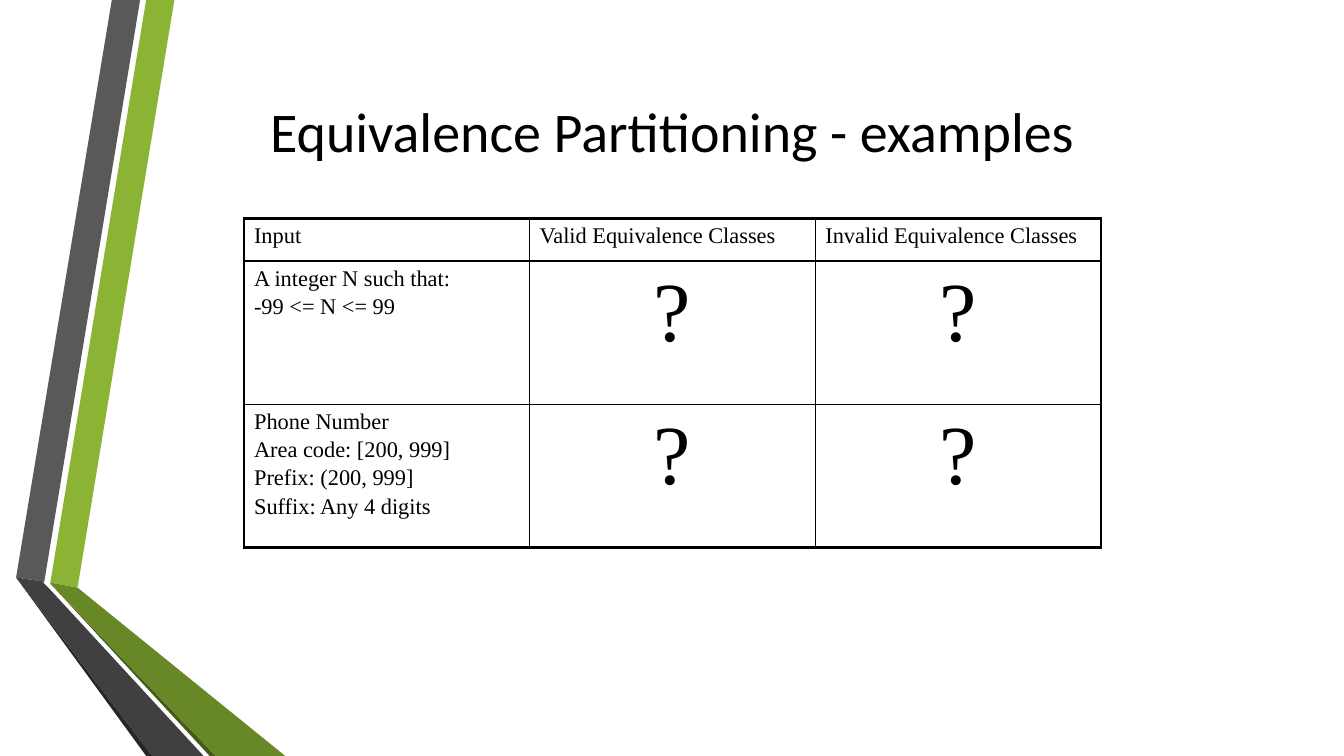
from lxml.etree import SubElement
from pptx import Presentation
from pptx.dml.color import RGBColor
from pptx.enum.text import MSO_ANCHOR, PP_ALIGN
from pptx.oxml import parse_xml
from pptx.oxml.ns import nsdecls, qn
from pptx.util import Inches, Pt

THEME = {
    "ink": "000000", "paper": "FFFFFF",
    "lime": "8BB434", "olive": "688727", "moss": "465A1A",
    "gray": "595959", "dark": "404040", "night": "262626",
    "title": {"name": "Calibri", "size": Pt(40), "bold": False},
    "text": {"name": "Times New Roman", "size": Pt(16), "bold": False},
    "mark": {"name": "Times New Roman", "size": Pt(60), "bold": False},
    "gap": Pt(2.5), "thick": Pt(2.25), "thin": Pt(1),
}


def style(para, look, align):
    para.alignment = align
    for key, value in THEME[look].items():
        setattr(para.font, key, value)
    para.font.color.rgb = RGBColor.from_string(THEME["ink"])


def border(cell, sides):
    props = cell._tc.get_or_add_tcPr()
    for spot, (side, width) in enumerate(sides.items()):
        line = parse_xml(f'<a:ln{side} {nsdecls("a")} w="{width}"/>')
        fill = SubElement(line, qn("a:solidFill"))
        SubElement(fill, qn("a:srgbClr"), val=THEME["ink"])
        props.insert(spot, line)


deck = Presentation()
deck.slide_width, deck.slide_height = Inches(13.33), Inches(7.5)
slide = deck.slides.add_slide(deck.slide_layouts[5])
slide.background.fill.solid()
slide.background.fill.fore_color.rgb = RGBColor.from_string(THEME["paper"])

# Folded ribbons on the left
ribbons = [
    ("lime", [(0.5, 5.78), (0.77, 5.83), (1.73, 0), (1.45, 0)]),
    ("gray", [(1.39, 0), (1.11, 0), (0.16, 5.73), (0.44, 5.77)]),
    ("night", [(0.16, 5.73), (1.45, 7.5), (1.51, 7.5)]),
    ("moss", [(0.5, 5.79), (2.08, 7.5), (2.14, 7.5)]),
    ("olive", [(0.5, 5.78), (0.5, 5.79), (2.14, 7.5), (2.83, 7.5), (0.77, 5.83)]),
    ("dark", [(2.02, 7.5), (0.48, 5.83), (0.43, 5.78), (0.44, 5.77),
              (0.16, 5.73), (1.51, 7.5)]),
]
for color, points in ribbons:
    start, *rest = [(Inches(x), Inches(y)) for x, y in points]
    pen = slide.shapes.build_freeform(*start)
    pen.add_line_segments(rest)
    ribbon = pen.convert_to_shape()
    ribbon.shadow.inherit = False
    ribbon.fill.solid()
    ribbon.fill.fore_color.rgb = RGBColor.from_string(THEME[color])
    ribbon.line.fill.background()

# Title
title = slide.shapes.title
place = {"left": 1, "top": 0.67, "width": 11.33, "height": 1.25}
for key, value in place.items():
    setattr(title, key, Inches(value))
title.text_frame.text = "Equivalence Partitioning - examples"
title.text_frame.vertical_anchor = MSO_ANCHOR.MIDDLE
style(title.text_frame.paragraphs[0], "title", PP_ALIGN.CENTER)

# Table of classes
rows = [
    ["Input", "Valid Equivalence Classes", "Invalid Equivalence Classes"],
    ["A integer N such that:\n-99 <= N <= 99", "?", "?"],
    ["Phone Number\nArea code: [200, 999]\nPrefix: (200, 999]\n"
     "Suffix: Any 4 digits", "?", "?"],
]
heights = [0.42, 1.42, 1.42]
last = len(rows) - 1
table = slide.shapes.add_table(
    3, 3, Inches(2.42), Inches(2.17), Inches(8.5), Inches(sum(heights))).table
table.first_row = table.horz_banding = False
for row, height in zip(table.rows, heights):
    row.height = Inches(height)

thick, thin = THEME["thick"], THEME["thin"]
for r, texts in enumerate(rows):
    for c, text in enumerate(texts):
        cell = table.cell(r, c)
        cell.text = text
        cell.fill.background()
        look, align = (("mark", PP_ALIGN.CENTER) if text == "?"
                       else ("text", PP_ALIGN.LEFT))
        for n, para in enumerate(cell.text_frame.paragraphs):
            style(para, look, align)
            para.space_before = THEME["gap"] if n else Pt(0)
        border(cell, {
            "L": thick if c == 0 else thin,
            "R": thick if c == last else thin,
            "T": thick if r == 0 else thin,
            "B": thick if r == last else thin,
        })

deck.save("out.pptx")
